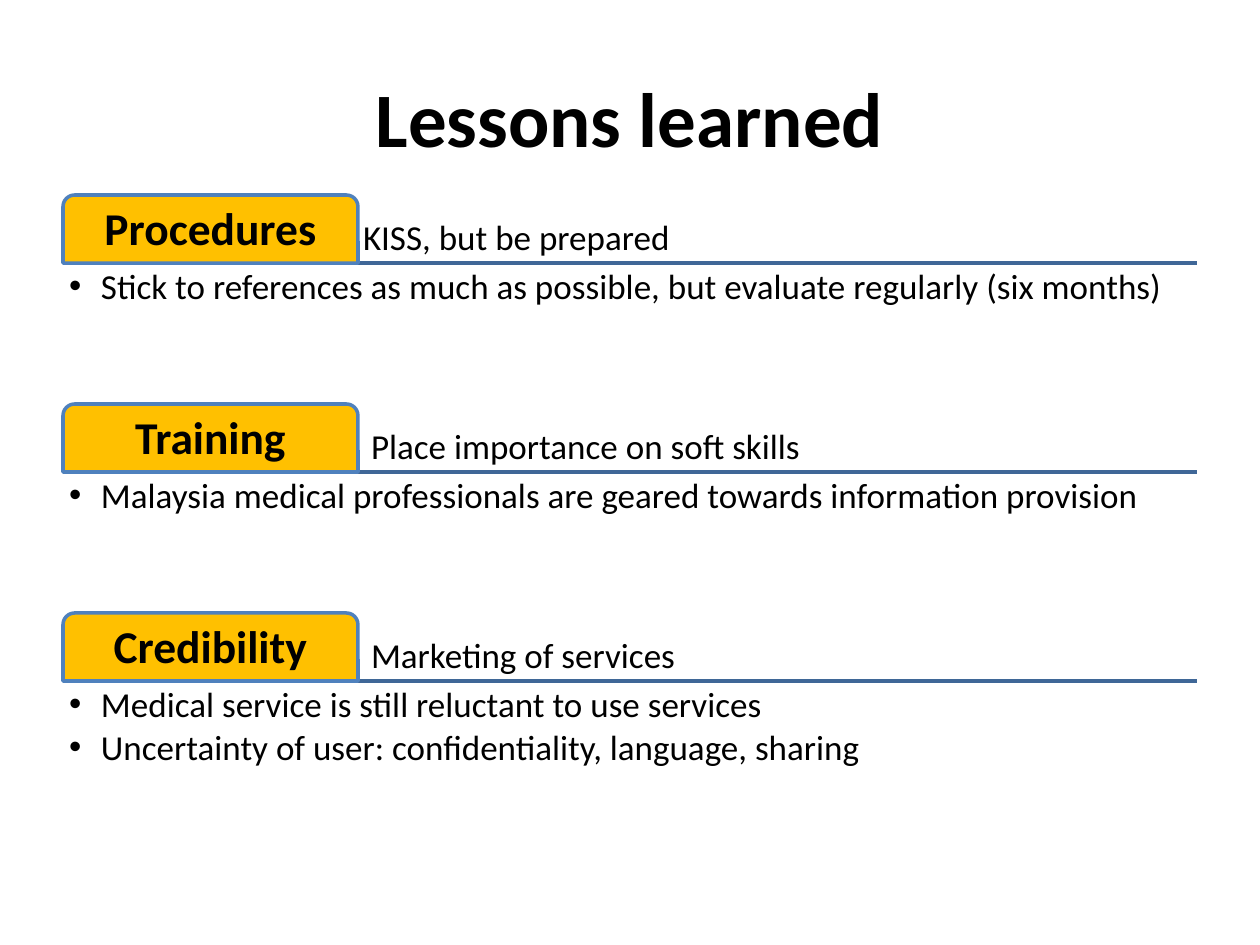
import dataclasses

import lxml.etree
import pptx
import pptx.dml.color
import pptx.enum.shapes
import pptx.enum.text
import pptx.oxml.ns
import pptx.util


@dataclasses.dataclass(frozen=True)
class Theme:
    font: str = "Calibri"
    text: str = "000000"
    tab_fill: str = "FFC000"
    tab_line: str = "4F81BD"
    rule: str = "3F6797"
    title_size: int = 44
    tab_size: int = 26
    body_size: int = 20
    line_width: int = 2


theme = Theme()
color = pptx.dml.color.RGBColor.from_string
qualified = pptx.oxml.ns.qn
anchor = pptx.enum.text.MSO_ANCHOR
align = pptx.enum.text.PP_ALIGN


def px(length):
    return pptx.util.Emu(round(length * 914400 / 126))


def format_text(shape, size, vertical, margins, alignment=align.LEFT, bold=False, after=0):
    frame = shape.text_frame
    frame.word_wrap = True
    frame.auto_size = pptx.enum.text.MSO_AUTO_SIZE.NONE
    frame.vertical_anchor = vertical
    frame.margin_left, frame.margin_top, frame.margin_right, frame.margin_bottom = map(px, margins)
    for paragraph in frame.paragraphs:
        paragraph.alignment = alignment
        paragraph.line_spacing = 0.9
        paragraph.space_before = pptx.util.Pt(0)
        paragraph.space_after = pptx.util.Pt(after)
        paragraph.font.name = theme.font
        paragraph.font.size = pptx.util.Pt(size)
        paragraph.font.bold = bold
        paragraph.font.color.rgb = color(theme.text)


LEFT, TOP, WIDTH = 63, 195, 1134
TAB_WIDTH, TAB_HEIGHT = 295, 68
LIST_HEIGHT, PITCH = 137, 209

sections = [
    ("Procedures", "KISS, but be prepared", 5,
     ["Stick to references as much as possible, but evaluate regularly (six months)"]),
    ("Training", "Place importance on soft skills", 13,
     ["Malaysia medical professionals are geared towards information provision"]),
    ("Credibility", "Marketing of services", 13,
     ["Medical service is still reluctant to use services",
      "Uncertainty of user: confidentiality, language, sharing"]),
]

presentation = pptx.Presentation()
presentation.slide_width, presentation.slide_height = px(1260), px(945)
slide = presentation.slides.add_slide(presentation.slide_layouts.get_by_name("Comparison"))

title = slide.shapes.title
title.left, title.top, title.width, title.height = map(px, (LEFT, 38, WIDTH, 157))
title.text_frame.text = "Lessons learned"
format_text(title, theme.title_size, anchor.MIDDLE, (13, 6, 13, 6), align.CENTER, bold=True)
title.text_frame.paragraphs[0].line_spacing = 1.0

bodies = [shape for shape in slide.placeholders if shape.placeholder_format.idx in (1, 2, 3, 4)]
for spare in bodies[len(sections):]:
    spare.element.getparent().remove(spare.element)

for index, (heading, summary, indent, points) in enumerate(sections):
    top = TOP + index * PITCH
    base = top + TAB_HEIGHT

    rule = slide.shapes.add_connector(
        pptx.enum.shapes.MSO_CONNECTOR.STRAIGHT, px(LEFT), px(base), px(LEFT + WIDTH), px(base))
    rule.line.color.rgb = color(theme.rule)
    rule.line.width = pptx.util.Pt(theme.line_width)
    lxml.etree.SubElement(rule.element.spPr, qualified("a:effectLst"))

    caption = slide.shapes.add_textbox(
        px(LEFT + TAB_WIDTH), px(top), px(WIDTH - TAB_WIDTH), px(TAB_HEIGHT))
    caption.text_frame.text = summary
    format_text(caption, theme.body_size, anchor.BOTTOM, (indent, 5, 5, 5), after=7)

    tab = slide.shapes.add_shape(
        pptx.enum.shapes.MSO_SHAPE.ROUND_2_SAME_RECTANGLE,
        px(LEFT), px(top), px(TAB_WIDTH), px(TAB_HEIGHT))
    tab.adjustments[0] = 0.17
    tab.adjustments[1] = 0
    tab.shadow.inherit = False
    tab.fill.solid()
    tab.fill.fore_color.rgb = color(theme.tab_fill)
    tab.line.color.rgb = color(theme.tab_line)
    tab.line.width = pptx.util.Pt(theme.line_width)
    tab.text_frame.text = heading
    format_text(tab, theme.tab_size, anchor.MIDDLE, (6, 7, 6, 6), align.CENTER, bold=True)

    body = bodies[index]
    body.left, body.top, body.width, body.height = map(px, (LEFT, base, WIDTH, LIST_HEIGHT))
    body.text_frame.text = "\n".join(points)
    for paragraph in body.text_frame.paragraphs:
        properties = paragraph._p.get_or_add_pPr()
        properties.set("marL", str(px(32)))
        properties.set("indent", str(px(-32)))
        lxml.etree.SubElement(properties, qualified("a:buFont"), typeface="Arial")
        lxml.etree.SubElement(properties, qualified("a:buChar"), char="•")
    format_text(body, theme.body_size, anchor.TOP, (6, 6, 6, 6), after=3)

presentation.save("out.pptx")
